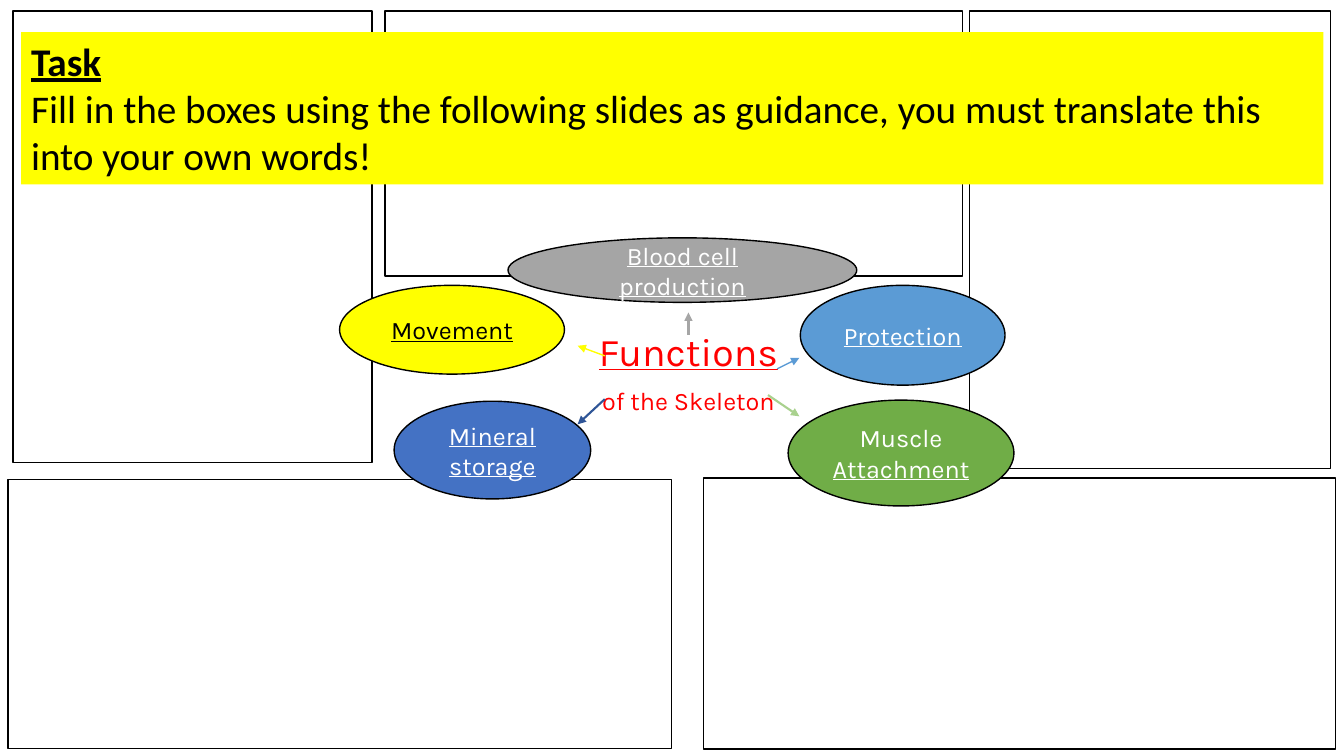
from typing import NamedTuple

from lxml.etree import SubElement
from pptx import Presentation
from pptx.dml.color import RGBColor
from pptx.enum.shapes import MSO_CONNECTOR as Connector, MSO_SHAPE as Preset
from pptx.enum.text import MSO_ANCHOR as Anchor, PP_ALIGN as Align
from pptx.oxml.ns import qn
from pptx.shapes.autoshape import Shape
from pptx.slide import Slide
from pptx.text.text import Font
from pptx.util import Pt

BLACK, WHITE, YELLOW, RED = "000000", "FFFFFF", "FFFF00", "FF0000"


class Frame(NamedTuple):
    left: float
    top: float
    width: float
    height: float


class Span(NamedTuple):
    text: str
    underline: bool = True


class Function(NamedTuple):
    spans: list[Span]
    frame: Frame
    fill: str
    ink: str = WHITE


class Arrow(NamedTuple):
    start: tuple[float, float]
    end: tuple[float, float]
    color: str
    weight: float


ANSWER_BOXES = [
    Frame(275, 7.9, 412.6, 189.4),
    Frame(9.4, 7.9, 256.3, 322.6),
    Frame(692.6, 7.9, 257.8, 326.9),
    Frame(502.6, 341.3, 451.4, 193.7),
    Frame(5.8, 342.7, 473.8, 192.2),
]
TITLE = Frame(381.6, 234, 220.3, 81.4)
BANNER = Frame(15.1, 23, 930.2, 108.7)

FUNCTIONS = [
    Function([Span("Protection")], Frame(571.7, 203.8, 146.2, 71.3), "5B9BD5"),
    Function([Span("Muscle ", False), Span("Attachment")],
             Frame(563, 285.8, 161.3, 75.6), "70AD47"),
    Function([Span("Movement")], Frame(242.6, 203.8, 160.6, 63.4), YELLOW, BLACK),
    Function([Span("Blood cell production")],
             Frame(362.9, 169.9, 249.1, 46.1), "A5A5A5"),
    Function([Span("Mineral storage")],
             Frame(281.5, 286.6, 140.4, 69.8), "4472C4"),
]

ARROWS = [
    Arrow((555.1, 263.5), (571, 255.6), "5B9BD5", 1),
    Arrow((548.6, 282.2), (571, 297.4), "A9D18E", 1.5),
    Arrow((432, 254.2), (412.6, 247), YELLOW, 1),
    Arrow((432, 285.1), (412.6, 303.1), "2F5597", 1.5),
    Arrow((491.8, 239), (491.8, 223.2), "A6A6A6", 1.5),
]


def rgb(color: str) -> RGBColor:
    return RGBColor.from_string(color)


def style(font: Font, name: str, size: float, color: str) -> None:
    font.name, font.size = name, Pt(size)
    font.color.rgb = rgb(color)


def add_filled(page: Slide, preset: Preset, frame: Frame, fill: str,
               outlined: bool = True) -> Shape:
    shape = page.shapes.add_shape(preset, *map(Pt, frame))
    shape.shadow.inherit = False
    shape.fill.solid()
    shape.fill.fore_color.rgb = rgb(fill)
    if outlined:
        shape.line.color.rgb = rgb(BLACK)
        shape.line.width = Pt(1)
    else:
        shape.line.fill.background()
    return shape


def add_function(page: Slide, function: Function) -> None:
    oval = add_filled(page, Preset.OVAL, function.frame, function.fill)
    oval.text_frame.word_wrap = True
    oval.text_frame.vertical_anchor = Anchor.MIDDLE
    para = oval.text_frame.paragraphs[0]
    para.alignment = Align.CENTER
    style(para.font, "Karla", 18, function.ink)
    for span in function.spans:
        run = para.add_run()
        run.text = span.text
        run.font.underline = span.underline


def add_arrow(page: Slide, arrow: Arrow) -> None:
    line = page.shapes.add_connector(
        Connector.STRAIGHT, *map(Pt, arrow.start + arrow.end))
    line.line.color.rgb = rgb(arrow.color)
    line.line.width = Pt(arrow.weight)
    properties = line.line._get_or_add_ln()
    SubElement(properties, qn("a:tailEnd"), type="triangle")
    SubElement(properties.getparent(), qn("a:effectLst"))


def add_title(page: Slide) -> None:
    text = page.shapes.add_textbox(*map(Pt, TITLE)).text_frame
    text.word_wrap = True
    text.text = "Functions\nof the Skeleton"
    for para, size in zip(text.paragraphs, (28, 18)):
        para.alignment = Align.CENTER
        para.line_spacing = 0.9
        para.space_before = Pt(10)
        style(para.font, "Karla", size, RED)
    text.paragraphs[0].runs[0].font.underline = True


def add_banner(page: Slide) -> None:
    banner = add_filled(page, Preset.RECTANGLE, BANNER, YELLOW, outlined=False)
    text = banner.text_frame
    text.word_wrap = True
    text.vertical_anchor = Anchor.TOP
    text.text = ("Task\nFill in the boxes using the following slides as guidance, "
                 "you must translate this into your own words!")
    for para in text.paragraphs:
        para.alignment = Align.LEFT
        style(para.font, "Calibri", 28, BLACK)
    heading = text.paragraphs[0].runs[0].font
    heading.bold = heading.underline = True


def main() -> None:
    deck = Presentation()
    deck.slide_width, deck.slide_height = Pt(960), Pt(540)
    page = deck.slides.add_slide(deck.slide_layouts[6])
    for frame in ANSWER_BOXES:
        add_filled(page, Preset.RECTANGLE, frame, WHITE)
    add_title(page)
    for function in FUNCTIONS:
        add_function(page, function)
    for arrow in ARROWS:
        add_arrow(page, arrow)
    add_banner(page)
    deck.save("out.pptx")


if __name__ == "__main__":
    main()
